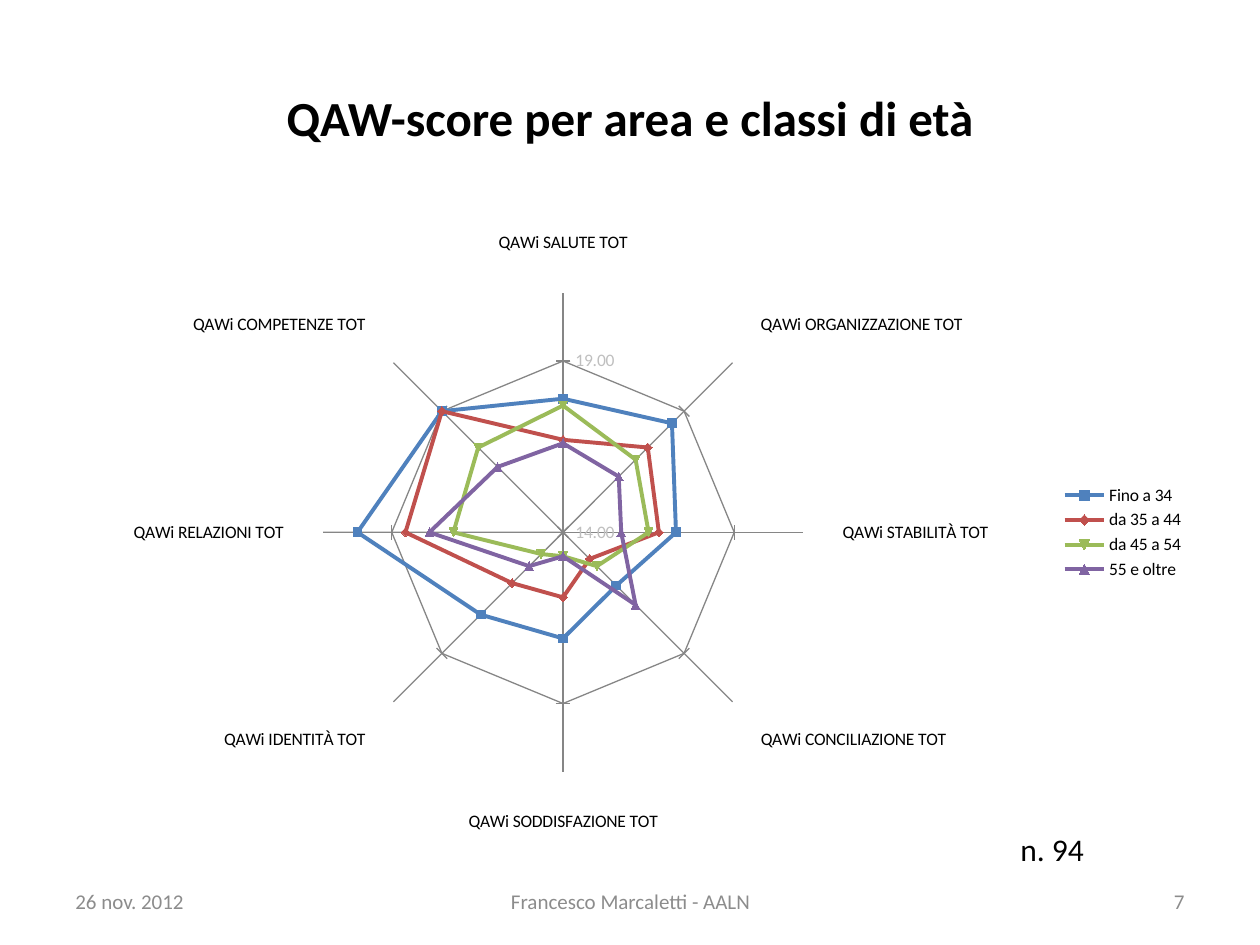
"""Build the slide with the radar chart of QAW scores by area and age group."""
from pptx import Presentation
from pptx.chart.data import CategoryChartData
from pptx.dml.color import RGBColor
from pptx.enum.chart import XL_CHART_TYPE, XL_LEGEND_POSITION, XL_TICK_MARK
from pptx.enum.text import MSO_ANCHOR, PP_ALIGN
from pptx.util import Inches, Pt

THEME = {
    "font": "Calibri",
    "ink": "000000", "footer": "8C8C8C", "scale": "BFBFBF", "grid": "868686",
    "title_size": 28, "note_size": 18, "footer_size": 12, "chart_size": 10,
    "series": ["4F81BD", "C0504D", "9BBB59", "8064A2"],
}
TITLE = "QAW-score per area e classi di età"
AREAS = ["SALUTE", "ORGANIZZAZIONE", "STABILITÀ", "CONCILIAZIONE",
         "SODDISFAZIONE", "IDENTITÀ", "RELAZIONI", "COMPETENZE"]
SCORES = {
    "Fino a 34": [17.9, 18.5, 17.3, 16.2, 17.1, 17.4, 20, 19],
    "da 35 a 44": [16.7, 17.5, 16.8, 15.1, 15.9, 16.1, 18.6, 19],
    "da 45 a 54": [17.7, 17, 16.5, 15.4, 14.7, 14.9, 17.2, 17.5],
    "55 e oltre": [16.6, 16.3, 15.7, 17, 14.7, 15.4, 17.9, 16.7],
}
LABELS = [
    ("26 nov. 2012", (0.5, 6.95, 2.33, 0.4), PP_ALIGN.LEFT, "footer"),
    ("Francesco Marcaletti - AALN", (3.42, 6.95, 3.17, 0.4), PP_ALIGN.CENTER, "footer"),
    ("7", (7.17, 6.95, 2.33, 0.4), PP_ALIGN.RIGHT, "footer"),
    ("n. 94", (8, 6.54, 0.85, 0.4), PP_ALIGN.LEFT, "note"),
]


def color(name):
    return RGBColor.from_string(THEME[name])


def style_font(font, size, ink):
    font.name, font.size = THEME["font"], Pt(THEME[size])
    font.color.rgb = color(ink)


def write(frame, text, align, size, ink, bold=False):
    frame.word_wrap = True
    frame.vertical_anchor = MSO_ANCHOR.MIDDLE
    paragraph = frame.paragraphs[0]
    paragraph.alignment = align
    run = paragraph.add_run()
    run.text = text
    style_font(run.font, size, ink)
    run.font.bold = bold


def add_title(slide):
    title = slide.shapes.title
    title.left, title.top, title.width, title.height = map(Inches, (0.5, 0.3, 9, 1.25))
    write(title.text_frame, TITLE, PP_ALIGN.CENTER, "title_size", "ink", True)


def add_radar(slide):
    data = CategoryChartData(number_format="0.00")
    data.categories = [f"QAWi {area} TOT" for area in AREAS]
    for age_group, values in SCORES.items():
        data.add_series(age_group, values)
    box = map(Inches, (0.5, 1.75, 9, 4.95))
    radar = slide.shapes.add_chart(XL_CHART_TYPE.RADAR_MARKERS, *box, data).chart
    radar.has_title = False
    style_font(radar.font, "chart_size", "ink")
    radar.has_legend = True
    radar.legend.position = XL_LEGEND_POSITION.RIGHT
    radar.legend.include_in_layout = False

    scale, spokes = radar.value_axis, radar.category_axis
    scale.minimum_scale, scale.maximum_scale, scale.major_unit = 14, 21, 5
    scale.major_tick_mark = XL_TICK_MARK.CROSS
    scale.tick_labels.number_format = "0.00"
    scale.tick_labels.number_format_is_linked = False
    style_font(scale.tick_labels.font, "chart_size", "scale")
    spokes.major_tick_mark = XL_TICK_MARK.OUTSIDE
    for line in (scale.format.line, scale.major_gridlines.format.line,
                 spokes.major_gridlines.format.line):
        line.color.rgb = color("grid")
        line.width = Pt(0.75)

    for series, shade in zip(radar.plots[0].series, THEME["series"]):
        series.smooth = False
        series.format.line.color.rgb = RGBColor.from_string(shade)
        series.format.line.width = Pt(2.25)


def main():
    deck = Presentation()
    deck.slide_width, deck.slide_height = Inches(10), Inches(7.5)
    slide = deck.slides.add_slide(deck.slide_layouts[5])
    add_title(slide)
    add_radar(slide)
    for text, box, align, role in LABELS:
        label = slide.shapes.add_textbox(*map(Inches, box))
        ink = "footer" if role == "footer" else "ink"
        write(label.text_frame, text, align, f"{role}_size", ink)
    deck.save("out.pptx")


if __name__ == "__main__":
    main()
